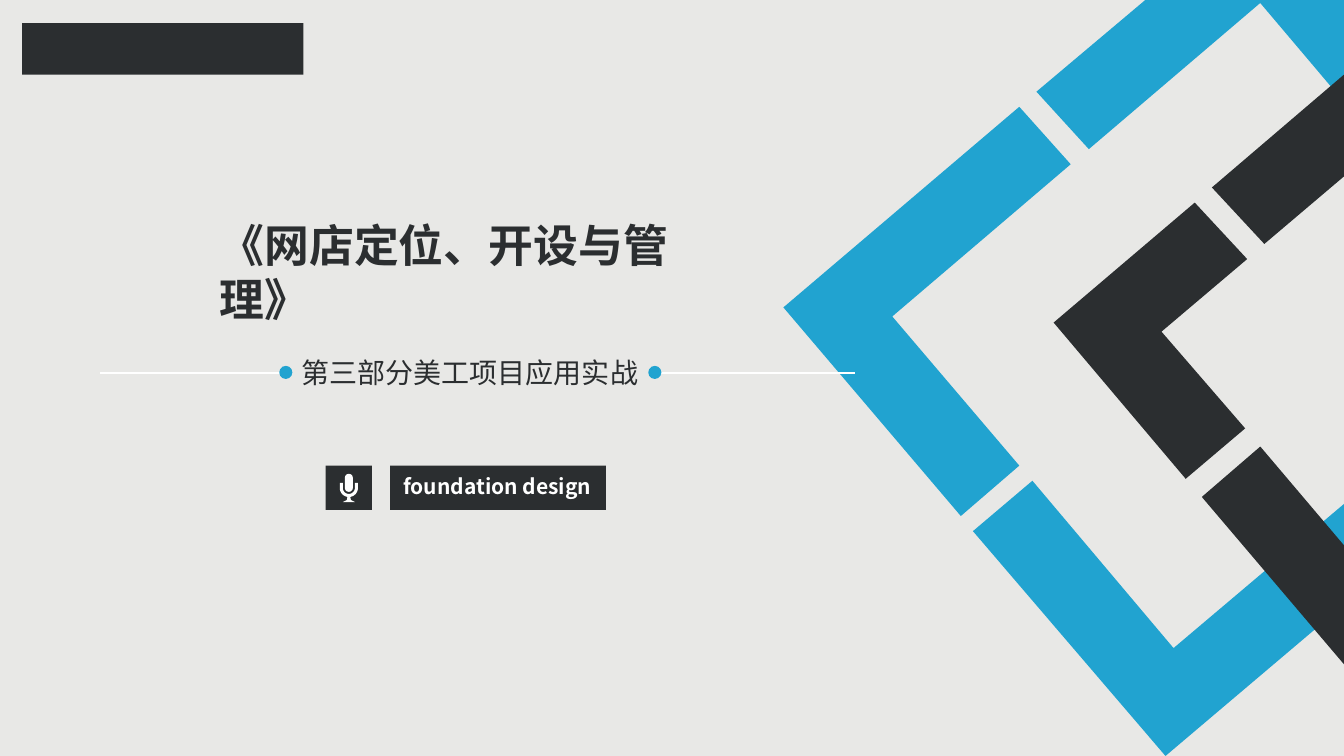
from dataclasses import dataclass
from math import cos, pi, sin

from lxml import etree
from pptx import Presentation
from pptx.dml.color import RGBColor
from pptx.enum.shapes import MSO_CONNECTOR, MSO_SHAPE
from pptx.enum.text import MSO_AUTO_SIZE, PP_ALIGN
from pptx.oxml.ns import qn
from pptx.util import Inches, Pt

RECTANGLE = MSO_SHAPE.RECTANGLE
ROUNDED = MSO_SHAPE.ROUNDED_RECTANGLE
OVAL = MSO_SHAPE.OVAL
STRAIGHT = MSO_CONNECTOR.STRAIGHT
FIT_TEXT = MSO_AUTO_SIZE.SHAPE_TO_FIT_TEXT
LEFT, CENTER = PP_ALIGN.LEFT, PP_ALIGN.CENTER


@dataclass(frozen=True)
class Theme:
    background: str = "E8E8E6"
    blue: str = "21A3D0"
    dark: str = "2B2E30"
    white: str = "FFFFFF"
    font: str = "Noto Sans CJK SC"
    title_size: int = 32
    subtitle_size: int = 20
    label_size: int = 15
    rule_width: float = 1.5


class SlideBuilder:
    def __init__(self, slide, theme):
        self.slide = slide
        self.theme = theme
        self.paint(slide.background.fill, theme.background)

    def paint(self, fill, color):
        fill.solid()
        fill.fore_color.rgb = RGBColor.from_string(color)

    def finish(self, shape, color):
        shape.shadow.inherit = False
        self.paint(shape.fill, color)
        shape.line.fill.background()
        return shape

    def shape(self, kind, left, top, width, height, color):
        shape = self.slide.shapes.add_shape(
            kind, Inches(left), Inches(top), Inches(width), Inches(height))
        return self.finish(shape, color)

    def outline(self, contours, color):
        """Draw closed polygons as one freeform shape."""
        contours = [[(Inches(x), Inches(y)) for x, y in points] for points in contours]
        builder = self.slide.shapes.build_freeform(*contours[0][0])
        for number, points in enumerate(contours):
            if number:
                builder.move_to(*points[0])
            builder.add_line_segments(points[1:], close=True)
        return self.finish(builder.convert_to_shape(), color)

    def rule(self, start, end, y):
        line = self.slide.shapes.add_connector(
            STRAIGHT, Inches(start), Inches(y), Inches(end), Inches(y))
        line.line.color.rgb = RGBColor.from_string(self.theme.white)
        line.line.width = Pt(self.theme.rule_width)
        etree.SubElement(line._element.spPr, qn("a:effectLst"))

    def text(self, words, left, top, width, height, size, color, bold=False, align=LEFT):
        box = self.slide.shapes.add_textbox(
            Inches(left), Inches(top), Inches(width), Inches(height))
        frame = box.text_frame
        frame.word_wrap = True
        frame.auto_size = FIT_TEXT
        paragraph = frame.paragraphs[0]
        paragraph.alignment = align
        run = paragraph.add_run()
        run.text = words
        run.font.size = Pt(size)
        run.font.bold = bold
        run.font.name = self.theme.font
        run.font.color.rgb = RGBColor.from_string(color)
        east_asian = etree.SubElement(run.font._element, qn("a:ea"))
        east_asian.set("typeface", self.theme.font)


def arc(center_x, center_y, radius, start, end, steps=16):
    """Points on a circle between two angles, measured clockwise from the right."""
    angles = [start + (end - start) * step / steps for step in range(steps + 1)]
    return [(center_x + radius * cos(a), center_y + radius * sin(a)) for a in angles]


BLUE_FRAME = [
    [(10.24, 4.77), (11.64, 6.43), (13.33, 5), (13.33, 6), (11.56, 7.5), (9.65, 5.27)],
    [(10.11, 1.06), (10.62, 1.63), (8.85, 3.14), (10.11, 4.62), (9.53, 5.12), (7.77, 3.05)],
    [(11.36, 0), (13.33, 0), (13.33, 1.02), (13.21, 0.87), (12.5, 0.03),
     (10.8, 1.48), (10.28, 0.91)],
]
DARK_FRAME = [
    [(12.5, 4.43), (13.33, 5.41), (13.33, 6.59), (11.92, 4.93)],
    [(11.85, 2.01), (12.37, 2.57), (11.52, 3.29), (12.35, 4.25), (11.76, 4.75), (10.45, 3.2)],
    [(13.33, 0.74), (13.33, 1.75), (12.54, 2.42), (12.02, 1.86)],
]


def draw_microphone(builder, color):
    center_x, center_y = 3.46, 4.84
    cradle = [
        (center_x + 0.09, 4.79),
        *arc(center_x, center_y, 0.09, 0, pi * 0.45),
        (center_x + 0.02, 4.96), (center_x + 0.06, 4.98),
        (center_x - 0.06, 4.98), (center_x - 0.02, 4.96),
        *arc(center_x, center_y, 0.09, pi * 0.55, pi),
        (center_x - 0.09, 4.79), (center_x - 0.06, 4.79),
        *arc(center_x, center_y, 0.06, pi, 0),
        (center_x + 0.06, 4.79),
    ]
    builder.outline([cradle], color)
    capsule = builder.shape(ROUNDED, center_x - 0.04, 4.7, 0.08, 0.18, color)
    capsule.adjustments[0] = 0.5


def main():
    theme = Theme()
    presentation = Presentation()
    presentation.slide_width = Inches(13.33)
    presentation.slide_height = Inches(7.5)
    slide = presentation.slides.add_slide(presentation.slide_layouts[6])
    builder = SlideBuilder(slide, theme)

    # Angled frames on the right
    builder.outline(BLUE_FRAME, theme.blue)
    builder.outline(DARK_FRAME, theme.dark)

    # Rules and dots on both sides of the subtitle
    for start, end, dot_left in ((2.8, 0.99, 2.77), (6.56, 8.48, 6.43)):
        builder.rule(start, end, 3.7)
        builder.shape(OVAL, dot_left, 3.63, 0.13, 0.13, theme.blue)

    # Corner bar
    builder.shape(RECTANGLE, 0.22, 0.23, 2.79, 0.51, theme.dark)

    # Microphone badge and label
    builder.shape(RECTANGLE, 3.23, 4.62, 0.46, 0.44, theme.dark)
    draw_microphone(builder, theme.white)
    builder.shape(RECTANGLE, 3.87, 4.62, 2.14, 0.44, theme.dark)
    builder.text("foundation design", 3.9, 4.65, 2.35, 0.35,
                 theme.label_size, theme.white, bold=True)

    # Subtitle and title
    builder.text("第三部分美工项目应用实战", 2.89, 3.48, 3.54, 0.44,
                 theme.subtitle_size, theme.dark, align=CENTER)
    builder.text("《网店定位、开设与管理》", 2.08, 2.11, 5.35, 0.64,
                 theme.title_size, theme.dark, bold=True)

    presentation.save("out.pptx")


if __name__ == "__main__":
    main()
